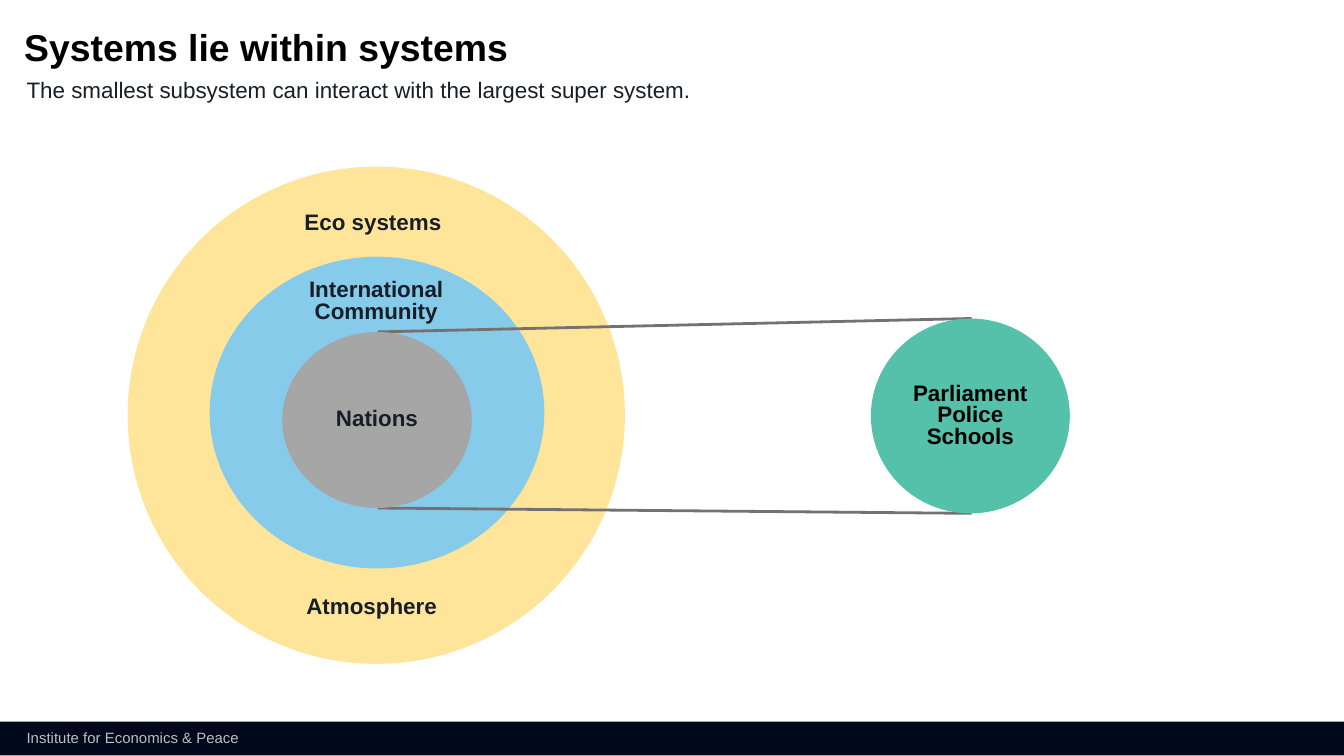
from lxml import etree
from pptx import Presentation
from pptx.dml.color import RGBColor
from pptx.enum.shapes import MSO_CONNECTOR, MSO_SHAPE
from pptx.enum.text import PP_ALIGN
from pptx.oxml.ns import qn
from pptx.util import Inches, Pt

INK = "171E28"


def color(code):
    return RGBColor.from_string(code)


def text(words, box, size=12, ink=INK, bold=False, align=PP_ALIGN.LEFT,
         space=1.0, pad=(0.1, 0.05)):
    frame = slide.shapes.add_textbox(*map(Inches, box)).text_frame
    frame.word_wrap = True
    frame.margin_left = frame.margin_right = Inches(pad[0])
    frame.margin_top = frame.margin_bottom = Inches(pad[1])
    frame.text = words
    for para in frame.paragraphs:
        para.alignment = align
        para.line_spacing = space
        font = para.runs[0].font
        font.name, font.size, font.bold = "Arial", Pt(size), bold
        font.color.rgb = color(ink)


def shape(kind, box, fill):
    item = slide.shapes.add_shape(kind, *map(Inches, box))
    item.shadow.inherit = False
    item.fill.solid()
    item.fill.fore_color.rgb = color(fill)
    item.line.fill.background()
    return item


# Widescreen page, 16 to 9
deck = Presentation()
deck.slide_width = Inches(10)
deck.slide_height = Inches(10) * 9 // 16
slide = deck.slides.add_slide(deck.slide_layouts[6])
label = dict(bold=True, align=PP_ALIGN.CENTER)

# Footer
shape(MSO_SHAPE.RECTANGLE, (0, 5.37, 10, 0.25), "00081C")
text("Institute for Economics & Peace", (0.1, 5.37, 1.8, 0.24),
     size=8, ink="BFBFBF")

# Outer system, see-through yellow
outer = shape(MSO_SHAPE.OVAL, (0.95, 1.24, 3.7, 3.7), "FFC000")
tint = outer._element.spPr.find(qn("a:solidFill")).find(qn("a:srgbClr"))
etree.SubElement(tint, qn("a:alpha"), val="40000")
text("Eco systems", (1.99, 1.5, 1.57, 0.3), **label)
text("Atmosphere", (2.12, 4.36, 1.29, 0.3), **label)

# Middle system
shape(MSO_SHAPE.OVAL, (1.56, 1.91, 2.49, 2.32), "86CBE9")
text("International Community", (1.9, 2.04, 1.8, 0.42), space=0.8, **label)

# Lines from the nations to their subsystem
for start, end in ((2.47, 2.37), (3.78, 3.82)):
    link = slide.shapes.add_connector(
        MSO_CONNECTOR.STRAIGHT, Inches(2.81), Inches(start),
        Inches(7.23), Inches(end))
    link.line.color.rgb = color("767171")
    link.line.width = Pt(1.5)
    etree.SubElement(link._element.spPr, qn("a:effectLst"))

# Subsystem
shape(MSO_SHAPE.OVAL, (6.48, 2.37, 1.48, 1.45), "55C1AA")
text("Parliament\nPolice\nSchools", (6.48, 2.81, 1.48, 0.59),
     ink="000000", space=0.8, **label)

# Inner system
shape(MSO_SHAPE.OVAL, (2.1, 2.47, 1.41, 1.31), "A6A6A6")
text("Nations", (2, 2.96, 1.61, 0.3), **label)

# Heading
text("The smallest subsystem can interact with the largest super system.",
     (0.1, 0.52, 6.17, 0.3))
text("Systems lie within systems", (0.18, 0.22, 4.83, 0.3),
     size=20, ink="000000", bold=True, space=0.9, pad=(0, 0))

deck.save("out.pptx")
